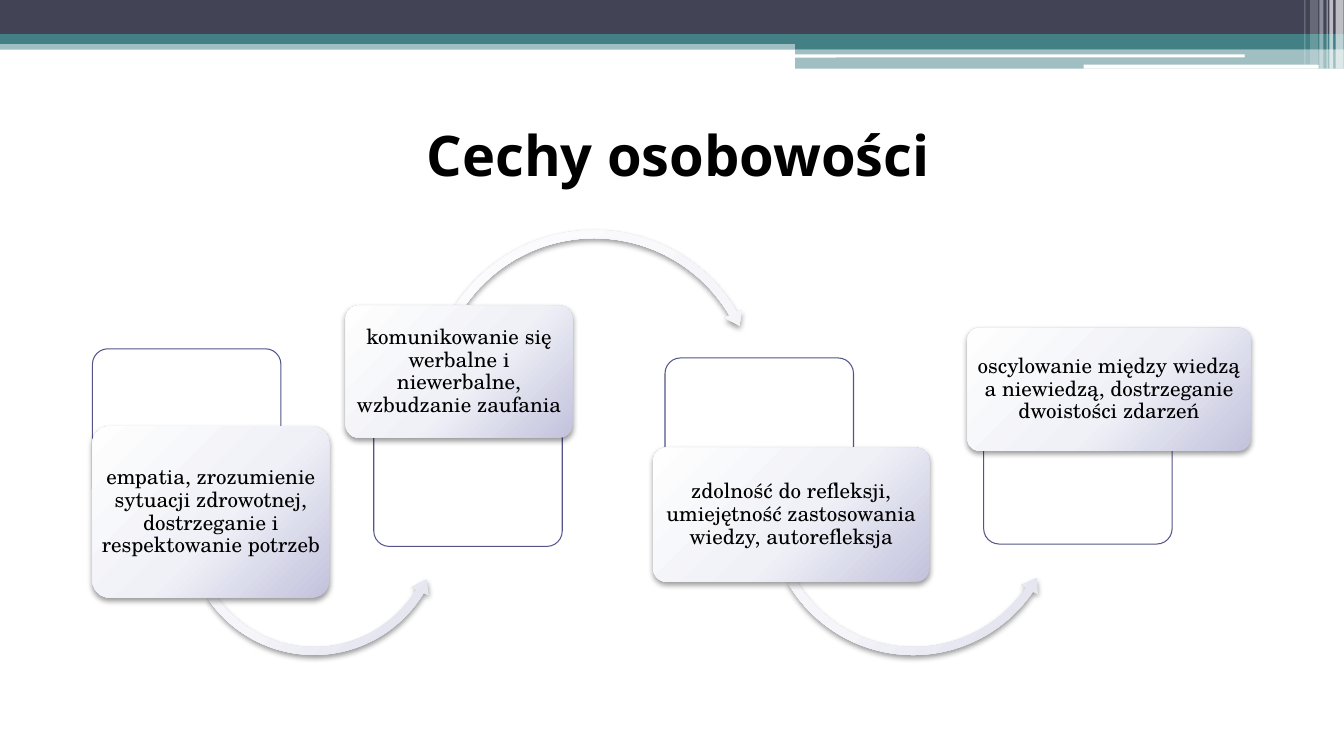
from dataclasses import dataclass

from pptx import Presentation
from pptx import util as u
from pptx.dml.color import RGBColor
from pptx.enum import shapes, text
from pptx.oxml import parse_xml
from pptx.oxml import ns

NAVY = RGBColor(0x42, 0x44, 0x56)
TEAL = RGBColor(0x43, 0x80, 0x86)
INDIGO = RGBColor(0x53, 0x54, 0x8A)
WHITE = RGBColor(0xFF, 0xFF, 0xFF)
BLACK = RGBColor(0x00, 0x00, 0x00)
CARD_STOPS = [(0, RGBColor(0xFE, 0xFE, 0xFE)), (55, RGBColor(0xF0, 0xF1, 0xF7)),
              (100, RGBColor(0xC2, 0xC2, 0xDD))]
ARROW_STOPS = [(0, RGBColor(0xFE, 0xFE, 0xFF)), (55, RGBColor(0xF6, 0xF6, 0xFA)),
               (100, RGBColor(0xDD, 0xDD, 0xEB))]
TITLE_FONT = "Open Sans"
BODY_FONT = "TeX Gyre Schola"
KIND = shapes.MSO_SHAPE
FRAME_SIZE = (4.75, 3.91)


@dataclass
class Box:
    """A region of the slide, in centimetres."""
    left: float
    top: float
    width: float
    height: float

    def place(self, left, top, width, height):
        return [u.Cm(n) for n in (self.left + left, self.top + top, width, height)]


# Shared helpers
def add_part(page, kind, place, color=None, opacity=100, line=None, adjust=()):
    shape = page.shapes.add_shape(kind, *place)
    shape.shadow.inherit = False
    for index, value in enumerate(adjust):
        shape.adjustments[index] = value
    if color is None:
        shape.fill.background()
    else:
        shape.fill.solid()
        shape.fill.fore_color.rgb = color
        if opacity < 100:
            tint = shape.fill._xPr.find(ns.qn("a:solidFill"))[0]
            tint.append(parse_xml(f'<a:alpha {ns.nsdecls("a")} val="{opacity * 1000}"/>'))
    if line is None:
        shape.line.fill.background()
    else:
        shape.line.color.rgb = line
        shape.line.width = u.Pt(0.75)
    return shape


def add_raised_part(page, kind, place, stops, adjust):
    """A shape with a radial gradient and a soft shadow below it."""
    shape = add_part(page, kind, place, adjust=adjust)
    properties = shape._element.spPr
    marks = "".join(f'<a:gs pos="{at * 1000}"><a:srgbClr val="{color}"/></a:gs>'
                    for at, color in stops)
    gradient = parse_xml(
        f'<a:gradFill {ns.nsdecls("a")} rotWithShape="1"><a:gsLst>{marks}</a:gsLst>'
        '<a:path path="circle"><a:fillToRect l="-40000" t="-90000" r="140000" b="190000"/>'
        '</a:path></a:gradFill>')
    properties.replace(properties.find(ns.qn("a:noFill")), gradient)
    properties.find(ns.qn("a:effectLst")).append(parse_xml(
        f'<a:outerShdw {ns.nsdecls("a")} blurRad="{u.Pt(4.1)}" dist="{u.Pt(2)}" '
        'dir="5400000" rotWithShape="0"><a:srgbClr val="000000"><a:alpha val="40000"/>'
        '</a:srgbClr></a:outerShdw>'))
    return shape


def write(frame, wording, font, size, bold=False, spacing=1.0):
    frame.word_wrap = True
    para = frame.paragraphs[0]
    para.alignment = text.PP_ALIGN.CENTER
    para.line_spacing = spacing
    span = para.add_run()
    span.text = wording
    span.font.name = font
    span.font.size = u.Pt(size)
    span.font.bold = bold
    span.font.color.rgb = BLACK


# Decorated top edge
def draw_header(page, box):
    bands = [
        (0, 1.02, box.width, 0.23, TEAL, 50),
        (0, 0, box.width, 0.86, NAVY, 100),
        (0, 0.86, box.width, 0.25, TEAL, 100),
        (20.04, 0.99, 13.83, 0.25, TEAL, 100),
        (20.04, 1.22, 13.83, 0.51, TEAL, 50),
    ]
    for *place, color, opacity in bands:
        add_part(page, KIND.RECTANGLE, box.place(*place), color, opacity)

    for rule in [(20.02, 1.37, 11.35, 0.08), (27.31, 1.63, 5.92, 0.1)]:
        add_part(page, KIND.ROUNDED_RECTANGLE, box.place(*rule), WHITE)

    stripes = [(33.66, 0.2, 1.73, 65), (33.5, 0.1, 1.73, 65), (33.43, 0.03, 1.73, 60),
               (33.25, 0.1, 1.73, 40), (33.02, 0.2, 1.63, 20), (32.87, 0.03, 1.63, 30)]
    for left, width, height, opacity in stripes:
        add_part(page, KIND.RECTANGLE, box.place(left, 0, width, height), WHITE, opacity)


def draw_title(page, box, wording):
    label = page.shapes.add_textbox(*box.place(0, 0, box.width, box.height))
    write(label.text_frame, wording, TITLE_FONT, 40, bold=True)


# Four traits joined by curved arrows
def draw_trait(page, box, wording, frame, card, arrow):
    add_part(page, KIND.ROUNDED_RECTANGLE, box.place(*frame, *FRAME_SIZE),
             WHITE, 90, line=INDIGO, adjust=[0.1])
    if arrow:
        kind, left, top, size, bend = arrow
        add_raised_part(page, kind, box.place(left, top, size, size), ARROW_STOPS, bend)
    panel = add_raised_part(page, KIND.ROUNDED_RECTANGLE, box.place(*card),
                            CARD_STOPS, [0.1])
    body = panel.text_frame
    body.vertical_anchor = text.MSO_ANCHOR.MIDDLE
    body.margin_left = body.margin_right = u.Cm(0.08)
    body.margin_top = body.margin_bottom = u.Cm(0.05)
    write(body, wording, BODY_FONT, 15, spacing=0.9)


def draw_traits(page, box):
    under, over = KIND.LEFT_CIRCULAR_ARROW, KIND.CIRCULAR_ARROW
    traits = [
        ("empatia, zrozumienie sytuacji zdrowotnej, dostrzeganie i respektowanie potrzeb",
         (0, 3.13), (0, 5.08, 5.97, 4.32),
         (under, 2.22, 4.25, 6.73, [0.03, 3.69, 18.79, 87.59, 0.035])),
        ("komunikowanie się werbalne i niewerbalne, wzbudzanie zaufania",
         (7.09, 4.2), (6.38, 2.04, 5.72, 3.33),
         (over, 8.34, 0, 8.61, [0.024, 2.85, 197.75, 128.11, 0.028])),
        ("zdolność do refleksji, umiejętność zastosowania wiedzy, autorefleksja",
         (14.43, 3.36), (14.13, 5.62, 6.96, 3.38),
         (under, 16.9, 3.41, 7.57, [0.027, 3.27, 20.63, 89.86, 0.031])),
        ("oscylowanie między wiedzą a niewiedzą, dostrzeganie dwoistości zdarzeń",
         (22.46, 4.14), (22.05, 2.6, 7.14, 3.1), None),
    ]
    for trait in traits:
        draw_trait(page, box, *trait)


def main():
    deck = Presentation()
    deck.slide_width, deck.slide_height = u.Cm(33.87), u.Cm(19.05)
    page = deck.slides.add_slide(deck.slide_layouts[6])
    draw_header(page, Box(0, 0, 33.87, 1.73))
    draw_traits(page, Box(2.33, 5.66, 29.2, 11))
    draw_title(page, Box(8.62, 2.92, 16.94, 1.96), "Cechy osobowości")
    deck.save("out.pptx")


if __name__ == "__main__":
    main()
